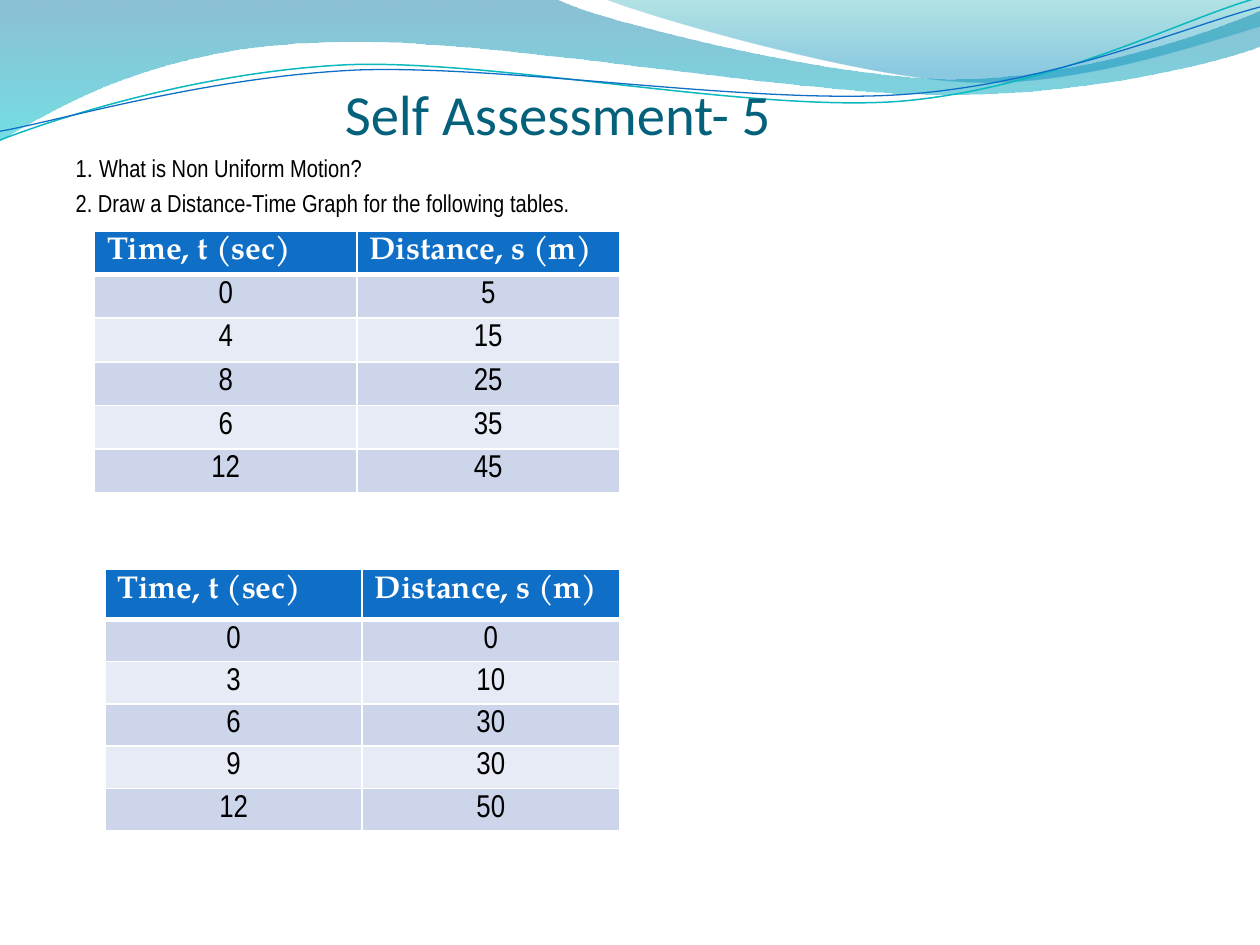
"""Build a self assessment slide with two motion tables below a wave banner."""
from lxml import etree
from pptx import Presentation
from pptx.dml.color import RGBColor
from pptx.enum import text as kinds
from pptx.oxml import ns
from pptx.util import Pt

INK = {"title": "04617B", "text": "000000", "head": "0F6FC6", "white": "FFFFFF",
       "odd": "CCD5EA", "even": "E7EBF5", "teal": "0AB8BF", "blue": "0F6FC6",
       "deep": "0074A1", "aqua": "00C6CF", "sea": "00A1A9", "sky": "008BBF"}
SERIF, SLIM = "TeX Gyre Pagella", "Arial Narrow"
HEADS = ("Time, t (sec)", "Distance, s (m)")
FIRST = [(0, 5), (4, 15), (8, 25), (6, 35), (12, 45)]
LAST = [(0, 0), (3, 10), (6, 30), (9, 30), (12, 50)]

BANDS = [
    ("LCCLCCCL",
     [(0, 0), (317, -0.7), (343, 12), (478, 45), (546, 45), (614, 45), (690, 19),
      (720, 6.5), (721, 26), (708, 32), (626, 55), (537, 54), (448, 54), (275, 20),
      (185, 24.5), (93, 26), (33, 60), (-0.7, 81.4), (0, 0)],
     [("deep", 0, 45), ("aqua", 1, 55)]),
    ("CCLL",
     [(345, -0.7), (366, 8), (491, 44.6), (554, 47), (616, 49.7), (692, 23),
      (720, 15), (720, 0), (345, -0.7)],
     [("sea", 0, 30), ("sky", 0.8, 45)]),
]
LINES = [
    ("teal", 0.85, [(0, 80), (34.5, 67), (114, 41), (199, 37.4), (284, 34), (427, 64),
                    (513, 57.6), (600, 51), (675, 11), (718.5, -1.4)]),
    ("blue", 0.75, [(0, 75), (34, 69), (118, 44), (204, 40.3), (290, 36.7), (430, 60.5),
                    (516, 54), (602, 48), (677.5, 15), (720, 4.3)]),
]


def tint(name):
    """Return the named colour."""
    return RGBColor.from_string(INK[name])


def add(node, tag, **attrs):
    """Append a drawing element and return it."""
    return etree.SubElement(node, ns.qn("a:" + tag), attrs)


def text(par, words, font=SLIM, size=14, color="text", bold=False, align=None):
    """Add one run of text with its format."""
    run = par.add_run()
    run.text = words
    run.font.name, run.font.size, run.font.bold = font, Pt(size), bold
    run.font.color.rgb = tint(color)
    if align is not None:
        par.alignment = align


def curve(slide, steps, spots, close):
    """Draw a path in which C takes three points and L takes one."""
    pen = slide.shapes.build_freeform(*spots[0], scale=Pt(1))
    pen.add_line_segments(spots[1:], close=close)
    shape = pen.convert_to_shape()
    shape.shadow.inherit = False
    parts = iter(shape.element.findall(".//" + ns.qn("a:lnTo")))
    for step in steps:
        part = next(parts)
        if step == "C":
            bend = etree.Element(ns.qn("a:cubicBezTo"))
            part.addprevious(bend)
            for item in (part, next(parts), next(parts)):
                bend.append(item[0])
                item.getparent().remove(item)
    return shape


def band(slide, steps, spots, stops):
    """Draw a wave with a clear downward blend."""
    shape = curve(slide, steps, spots, True)
    shape.line.fill.background()
    shape.fill.gradient()
    shape.fill.gradient_angle = 270
    for stop, (name, place, _) in zip(shape.fill.gradient_stops, stops):
        stop.color.rgb, stop.position = tint(name), place
    tones = shape.element.spPr.findall(".//" + ns.qn("a:srgbClr"))
    for tone, (_, _, part) in zip(tones, stops):
        add(tone, "alpha", val=str(part * 1000))


def strand(slide, name, width, spots):
    """Draw a thin open wave."""
    shape = curve(slide, "CCC", spots, False)
    shape.fill.background()
    shape.line.color.rgb, shape.line.width = tint(name), Pt(width)


def place(shape, left, top, width, height):
    """Move a placeholder, bring it to the front and return its frame."""
    shape.left, shape.top, shape.width, shape.height = map(Pt, (left, top, width, height))
    shape.element.getparent().append(shape.element)
    frame = shape.text_frame
    frame.auto_size, frame.word_wrap = kinds.MSO_AUTO_SIZE.NONE, True
    return frame


def title(slide):
    """Write the title."""
    frame = place(slide.shapes.title, 36, 42, 648, 42)
    frame.vertical_anchor = kinds.MSO_ANCHOR.BOTTOM
    frame.margin_left, frame.margin_right, frame.margin_bottom = Pt(161), 0, 0
    text(frame.paragraphs[0], "Self Assessment- 5", font="Calibri", size=32.4,
         color="title", align=kinds.PP_ALIGN.LEFT)


def tasks(slide):
    """Write the two questions."""
    frame = place(slide.placeholders[1], 36, 84, 648, 420)
    one, two = frame.paragraphs[0], frame.add_paragraph()
    text(one, "1")
    text(one, ". ", font=SERIF)
    text(one, "What is Non Uniform Motion?")
    text(two, "2. Draw a Distance-Time Graph for the following tables.")
    for par in (one, two):
        props = par._p.get_or_add_pPr()
        props.set("marL", str(Pt(21.6)))
        props.set("indent", str(-Pt(21.6)))
        add(props, "buNone")


def edge(cell, row):
    """Give a cell white borders, thick below the head row."""
    props = cell._tc.get_or_add_tcPr()
    thick = {0: "B", 1: "T"}.get(row)
    for side in "LRTB":
        line = add(props, "ln" + side, w=str(Pt(3 if side == thick else 1)))
        add(add(line, "solidFill"), "srgbClr", val=INK["white"])


def grid(slide, data, left, top, width, first, rest):
    """Add a table with a head row and striped data rows."""
    rows = [HEADS, *data]
    high = first + rest * len(data)
    table = slide.shapes.add_table(len(rows), len(HEADS), Pt(left), Pt(top),
                                   Pt(width), Pt(high)).table
    for i, row in enumerate(rows):
        table.rows[i].height = Pt(rest if i else first)
        for j, value in enumerate(row):
            cell = table.cell(i, j)
            cell.margin_top, cell.margin_bottom = Pt(3.4), 0
            cell.vertical_anchor = kinds.MSO_ANCHOR.TOP
            edge(cell, i)
            cell.fill.solid()
            cell.fill.fore_color.rgb = tint(("even", "odd")[i % 2] if i else "head")
            look = (dict(align=kinds.PP_ALIGN.CENTER) if i
                    else dict(font=SERIF, color="white", bold=True))
            text(cell.text_frame.paragraphs[0], str(value), size=18, **look)


def main():
    """Build and save the slide."""
    deck = Presentation()
    deck.slide_width, deck.slide_height = Pt(720), Pt(540)
    slide = deck.slides.add_slide(deck.slide_layouts[1])
    for item in BANDS:
        band(slide, *item)
    for item in LINES:
        strand(slide, *item)
    title(slide)
    tasks(slide)
    grid(slide, FIRST, 54, 132, 300, 24.8, 25)
    grid(slide, LAST, 60, 325.5, 294, 28.4, 24.2)
    deck.save("out.pptx")


if __name__ == "__main__":
    main()
